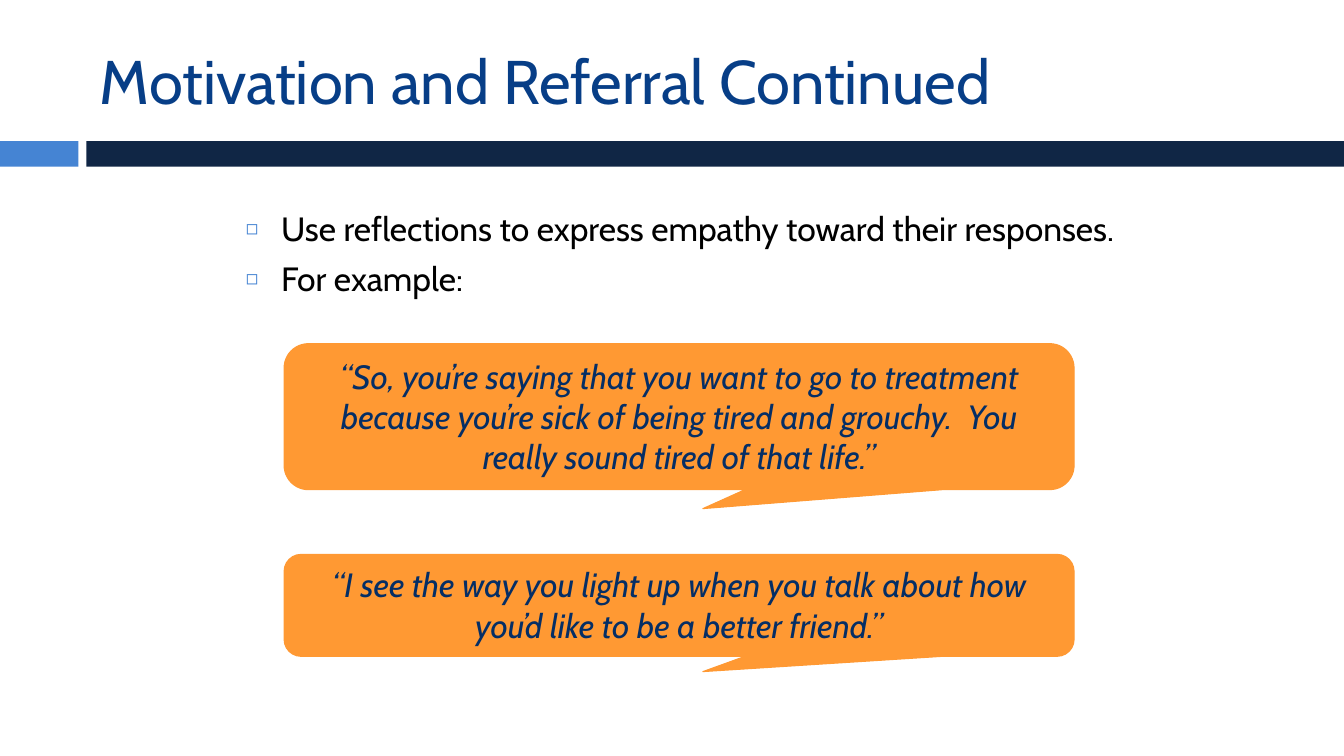
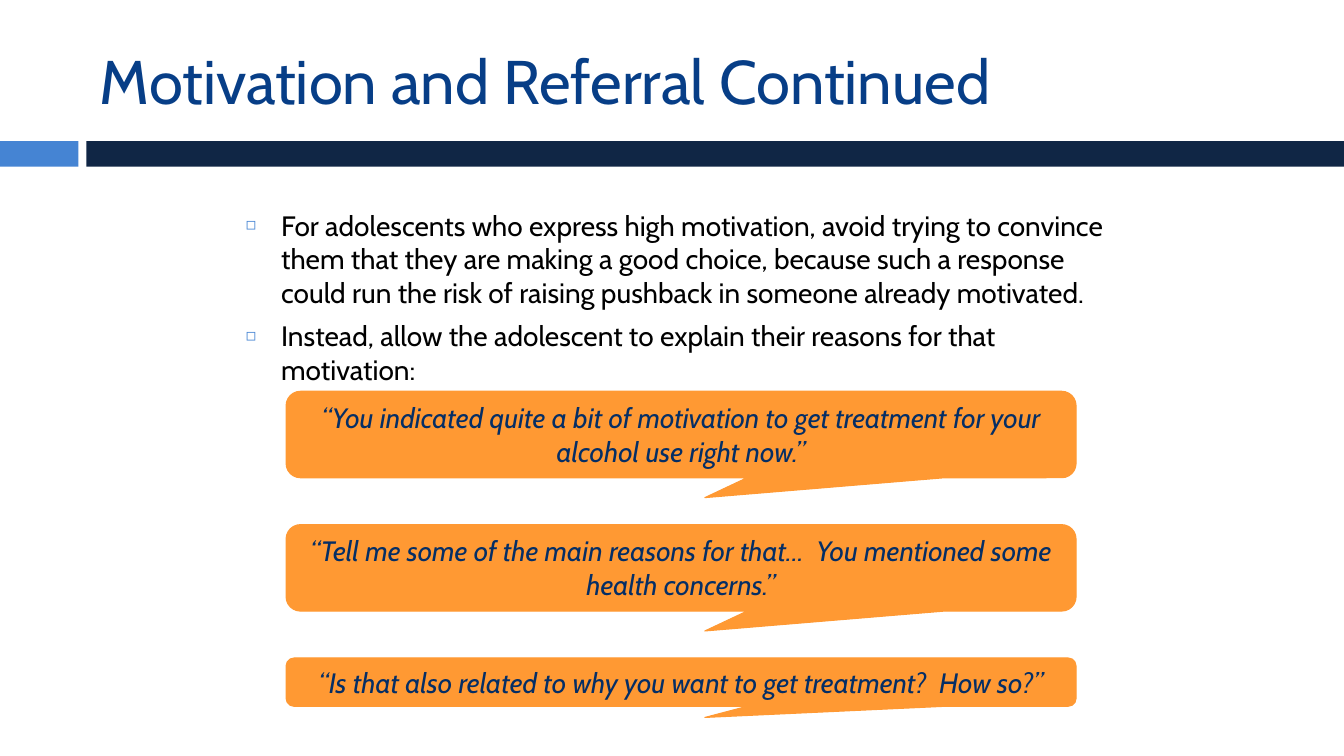
"""Build two slides on motivation and referral, with speech callouts."""
from lxml import etree
from pptx import Presentation, util as u
from pptx.dml.color import RGBColor
from pptx.enum import shapes as kinds, text as t
from pptx.oxml.ns import qn

FONT = "Cabin"
BLUE, NAVY, TITLE, INK = "4584D3", "102645", "073E87", "000000"
ORANGE, QUOTE = "FF9933", "052E65"

WIDE, HIGH = 33.87, 19.05
BANDS = [(0, 1.98, BLUE), (2.18, WIDE - 2.18, NAVY)]
BAND_TOP, BAND_HIGH = 3.56, 0.64
PLACES = [(2.26, 0.64, 30.2, 2.74), (5.94, 5.12, 22.66, 12.3)]
INDENT = 0.89
CALL_WIDE = 19.91

HEAD = "Motivation and Referral Continued"
SLIDES = [
    {
        "size": 24,
        "points": [
            "Use reflections to express empathy toward their responses.",
            "For example:",
        ],
        "left": 7.16, "top": 8.66, "gap": 1.63,
        "quotes": [
            ("“So, you’re saying that you want to go to treatment because you’re "
             "sick of being tired and grouchy.  You really sound tired of that life.”",
             3.68, (0.03, 0.63)),
            ("“I see the way you light up when you talk about how you’d like to "
             "be a better friend.”", 2.57, (0.03, 0.65)),
        ],
    },
    {
        "size": 20,
        "points": [
            "For adolescents who express high motivation, avoid trying to convince "
            "them that they are making a good choice, because such a response could "
            "run the risk of raising pushback in someone already motivated.",
            "Instead, allow the adolescent to explain their reasons for that motivation:",
        ],
        "left": 7.21, "top": 9.86, "gap": 1.18,
        "quotes": [
            ("“You indicated quite a bit of motivation to get treatment for your "
             "alcohol use right now.”", 2.18, (0.03, 0.73)),
            ("“Tell me some of the main reasons for that...  You mentioned some "
             "health concerns.”", 2.18, (0.03, 0.73)),
            ("“Is that also related to why you want to get treatment?  How so?”",
             1.22, (0.03, 0.73)),
        ],
    },
]


def rgb(code):
    return RGBColor.from_string(code)


def put(thing, values):
    for name, value in values.items():
        setattr(thing, name, value)


def place(shape, box):
    put(shape, dict(zip(("left", "top", "width", "height"), map(u.Cm, box))))


def style(para, size, color, italic=False, **layout):
    put(para, layout)
    put(para.font, {"name": FONT, "size": u.Pt(size), "italic": italic})
    para.font.color.rgb = rgb(color)


def draw(slide, kind, box, color):
    shape = slide.shapes.add_shape(kind, *map(u.Cm, box))
    shape.shadow.inherit = False
    shape.fill.solid()
    shape.fill.fore_color.rgb = rgb(color)
    shape.line.fill.background()
    return shape


def bullet(para):
    props = para._p.get_or_add_pPr()
    props.set("marL", str(u.Cm(INDENT)))
    props.set("indent", str(-u.Cm(INDENT)))
    tint = etree.SubElement(props, qn("a:buClr"))
    etree.SubElement(tint, qn("a:srgbClr"), val=BLUE)
    etree.SubElement(props, qn("a:buSzPct"), val="60000")
    etree.SubElement(props, qn("a:buChar"), char="◻")


def callout(slide, box, words, size, tip):
    shape = draw(slide, kinds.MSO_SHAPE.ROUNDED_RECTANGULAR_CALLOUT, box, ORANGE)
    shape.line.color.rgb = rgb(ORANGE)
    shape.line.width = u.Pt(0.75)
    for spot, value in enumerate(tip):
        shape.adjustments[spot] = value
    frame = shape.text_frame
    put(frame, {"text": words, "word_wrap": True,
                "auto_size": t.MSO_AUTO_SIZE.SHAPE_TO_FIT_TEXT,
                "vertical_anchor": t.MSO_ANCHOR.TOP})
    style(frame.paragraphs[0], size, QUOTE, True, alignment=t.PP_ALIGN.CENTER,
          space_before=u.Pt(5), space_after=u.Pt(6))


def fill(slide, data):
    title, body = slide.placeholders
    size = data["size"]
    title.text = HEAD
    style(title.text_frame.paragraphs[0], 44, TITLE, alignment=t.PP_ALIGN.LEFT)
    body.text = "\n".join(data["points"])
    for holder in (title, body):
        holder.text_frame.auto_size = t.MSO_AUTO_SIZE.NONE
    for para in body.text_frame.paragraphs:
        style(para, size, INK, space_before=u.Pt(7))
        bullet(para)
    top = data["top"]
    for words, high, tip in data["quotes"]:
        callout(slide, (data["left"], top, CALL_WIDE, high), words, size, tip)
        top += high + data["gap"]


def main():
    deck = Presentation()
    put(deck, {"slide_width": u.Cm(WIDE), "slide_height": u.Cm(HIGH)})
    layout = deck.slide_layouts[1]
    for holder, box in zip(layout.placeholders, PLACES):
        place(holder, box)
    pages = [deck.slides.add_slide(layout) for _ in SLIDES]
    for left, wide, color in BANDS:
        band = draw(pages[0], kinds.MSO_SHAPE.RECTANGLE,
                    (left, BAND_TOP, wide, BAND_HIGH), color)
        layout.shapes.element.append(band.element)
    for page, data in zip(pages, SLIDES):
        fill(page, data)
    deck.save("out.pptx")


if __name__ == "__main__":
    main()
